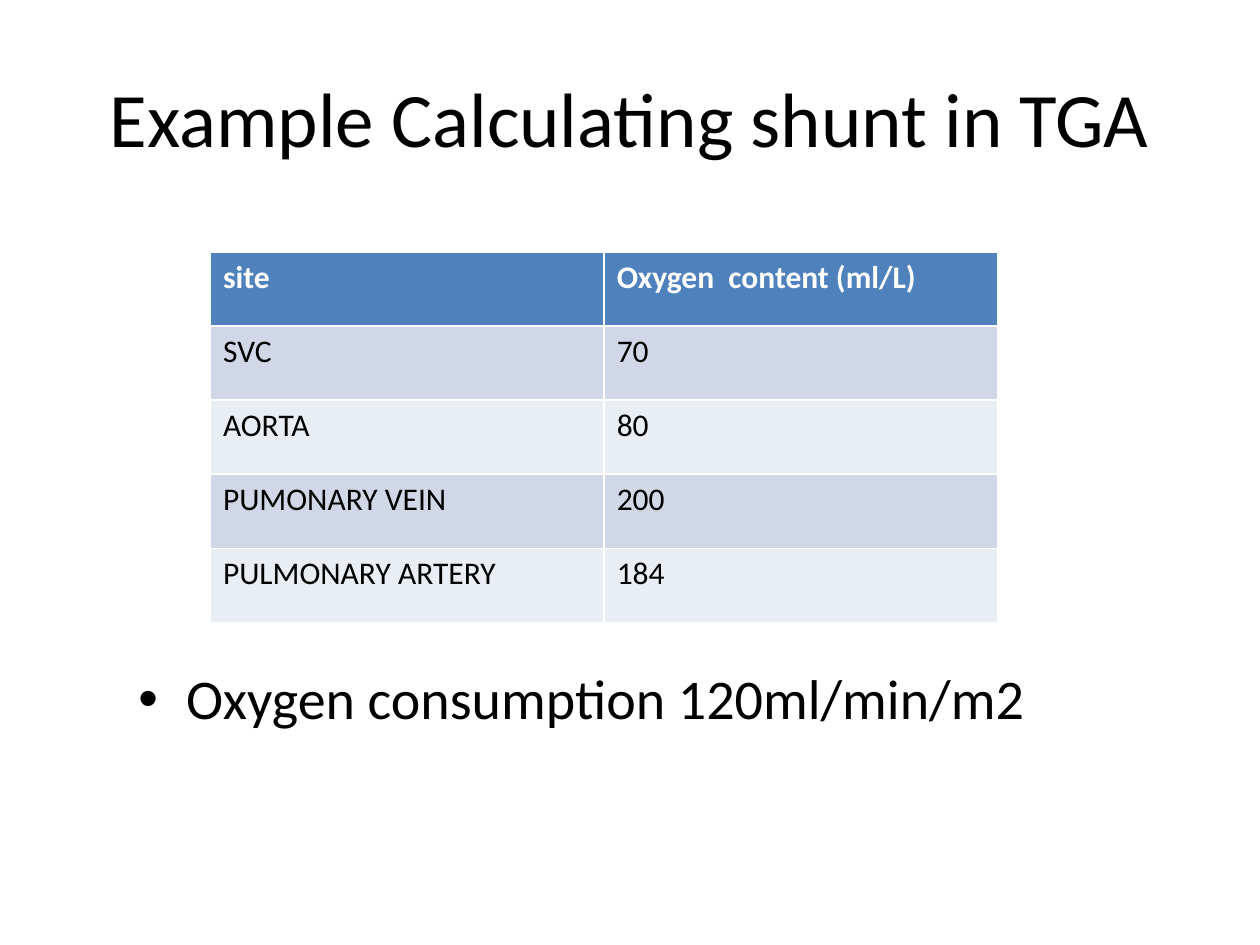
from lxml import etree
from pptx import Presentation
from pptx.dml.color import RGBColor
from pptx.enum.text import MSO_ANCHOR, PP_ALIGN
from pptx.oxml.ns import qn
from pptx.util import Inches, Pt

CENTER = PP_ALIGN.CENTER
MIDDLE = MSO_ANCHOR.MIDDLE
BLACK = RGBColor(0x00, 0x00, 0x00)
WHITE = RGBColor(0xFF, 0xFF, 0xFF)
BLUE = RGBColor(0x4F, 0x81, 0xBD)
BANDS = (RGBColor(0xD0, 0xD8, 0xE8), RGBColor(0xE9, 0xED, 0xF4))
FONT = "Calibri"

ROWS = [
    ("site", "Oxygen  content (ml/L)"),
    ("SVC", "70"),
    ("AORTA", "80"),
    ("PUMONARY VEIN", "200"),
    ("PULMONARY ARTERY", "184"),
]


def style(para, size, color, bold=False):
    for run in para.runs:
        font = run.font
        font.name, font.size, font.bold = FONT, Pt(size), bold
        font.color.rgb = color


def add_text(slide, box, text, size):
    frame = slide.shapes.add_textbox(*map(Inches, box)).text_frame
    frame.word_wrap = True
    frame.text = text
    style(frame.paragraphs[0], size, BLACK)
    return frame


def add_title(slide, box):
    frame = add_text(slide, box, "Example Calculating shunt in TGA", 44)
    frame.vertical_anchor = MIDDLE
    frame.paragraphs[0].alignment = CENTER


def add_sites(slide, box):
    """Add the table of oxygen content, with a header and banded rows."""
    shape = slide.shapes.add_table(len(ROWS), len(ROWS[0]), *map(Inches, box))
    for r, row in enumerate(ROWS):
        head = r == 0
        for c, text in enumerate(row):
            cell = shape.table.cell(r, c)
            cell.text = text
            cell.fill.solid()
            cell.fill.fore_color.rgb = BLUE if head else BANDS[(r - 1) % 2]
            style(cell.text_frame.paragraphs[0], 18, WHITE if head else BLACK, head)


def add_bullet(slide, box):
    frame = add_text(slide, box, "Oxygen consumption 120ml/min/m2", 32)
    para = frame.paragraphs[0]
    para.space_before = Pt(6.4)
    props = para._p.get_or_add_pPr()
    props.set("marL", str(Inches(0.38)))
    props.set("indent", str(-Inches(0.38)))
    etree.SubElement(props, qn("a:buFont"), typeface="Arial")
    etree.SubElement(props, qn("a:buChar"), char="•")


def main():
    deck = Presentation()
    deck.slide_width, deck.slide_height = Inches(10), Inches(7.5)
    slide = deck.slides.add_slide(deck.slide_layouts[6])
    add_title(slide, (0.5, 0.3, 9, 1.25))
    add_sites(slide, (1.67, 2, 6.25, 2.94))
    add_bullet(slide, (1, 5.22, 7.33, 1.45))
    deck.save("out.pptx")


if __name__ == "__main__":
    main()
